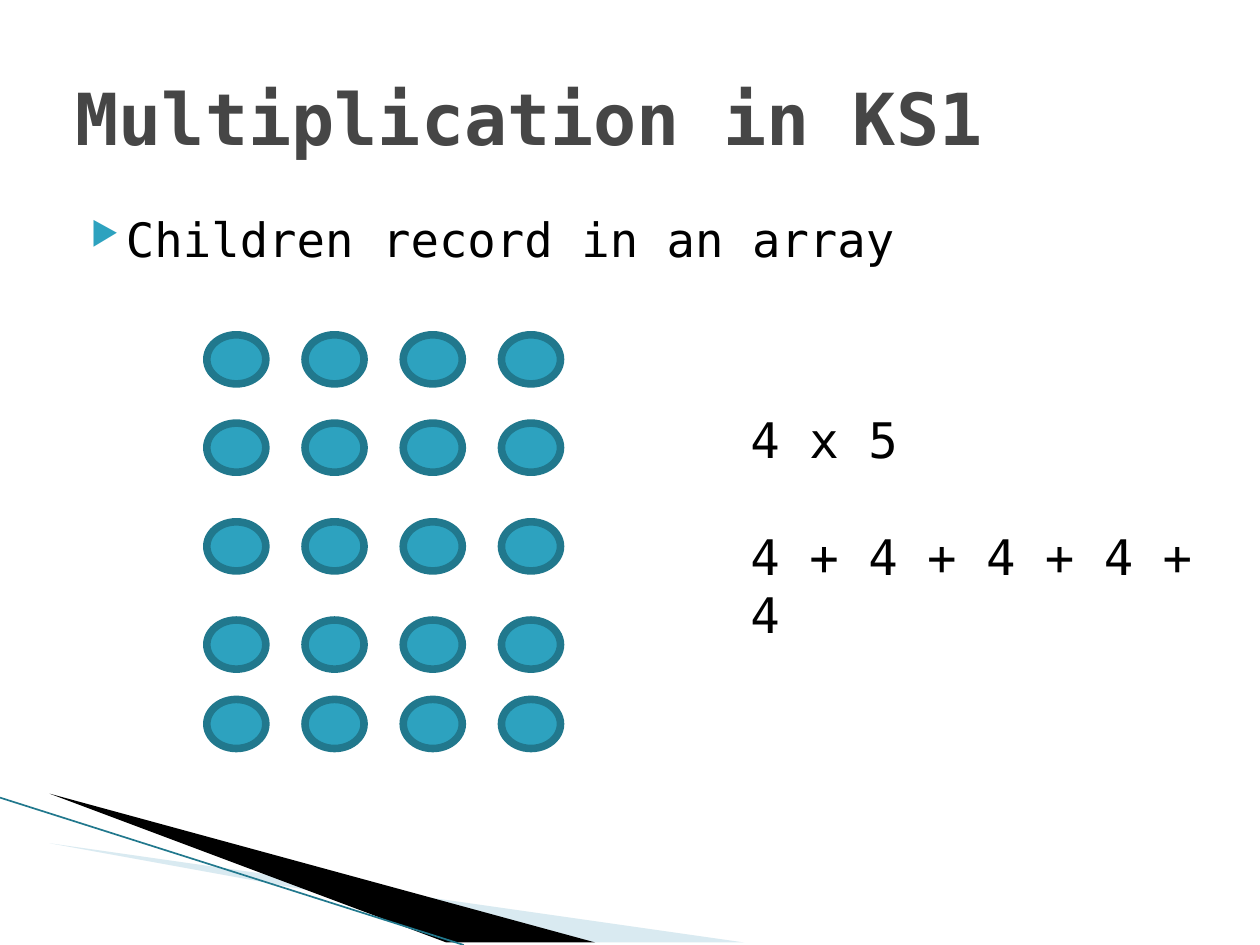
from lxml import etree
from pptx import Presentation
from pptx.dml.color import RGBColor
from pptx.enum.shapes import MSO_CONNECTOR, MSO_SHAPE
from pptx.enum.text import MSO_ANCHOR, PP_ALIGN
from pptx.oxml.ns import qn
from pptx.util import Cm, Pt

STRAIGHT = MSO_CONNECTOR.STRAIGHT
OVAL = MSO_SHAPE.OVAL
MIDDLE = MSO_ANCHOR.MIDDLE
LEFT = PP_ALIGN.LEFT

TEAL = RGBColor(0x2D, 0xA2, 0xBF)
DARK_TEAL = RGBColor(0x21, 0x78, 0x8D)
PALE = RGBColor(0xA0, 0xCB, 0xDC)
GREY = RGBColor(0x46, 0x46, 0x46)
BLACK = RGBColor(0, 0, 0)

FONT = "DejaVu Sans Mono"
TITLE = {"name": FONT, "size": Pt(41), "bold": True}
BULLET = {"name": FONT, "size": Pt(27)}
SUM = {"name": FONT, "size": Pt(28)}


class SlideBuilder:
    """Draws styled elements on the current slide."""

    def __init__(self, slide):
        self.s = slide

    def place(self, sp, box):
        sp.left, sp.top, sp.width, sp.height = (Cm(v) for v in box)

    def add_text_run(self, p, text, fmt, color):
        p.alignment = LEFT
        r = p.add_run()
        r.text = text
        for key, value in fmt.items():
            setattr(r.font, key, value)
        r.font.color.rgb = color

    def title(self, text, box):
        sp = self.s.shapes.title
        self.place(sp, box)
        tf = sp.text_frame
        tf.word_wrap = True
        tf.vertical_anchor = MIDDLE
        self.add_text_run(tf.paragraphs[0], text, TITLE, GREY)

    def text(self, lines, box, fmt, gap=0):
        sp = self.s.shapes.add_textbox(*(Cm(v) for v in box))
        tf = sp.text_frame
        tf.word_wrap = True
        for i, line in enumerate(lines):
            p = tf.add_paragraph() if i else tf.paragraphs[0]
            if i:
                p.space_before = Pt(gap)
            self.add_text_run(p, line, fmt, BLACK)
        return tf

    def bullet(self, text, box):
        p = self.text([text], box, BULLET).paragraphs[0]
        pPr = p._p.get_or_add_pPr()
        pPr.set("marL", str(Cm(1.02)))
        pPr.set("indent", str(Cm(-0.71)))
        clr = etree.SubElement(pPr, qn("a:buClr"))
        etree.SubElement(clr, qn("a:srgbClr"), val=str(TEAL))
        etree.SubElement(pPr, qn("a:buSzPct"), val="68000")
        etree.SubElement(pPr, qn("a:buChar"), char="▶")

    def dot(self, x, y, w, h):
        sp = self.s.shapes.add_shape(OVAL, Cm(x), Cm(y), Cm(w), Cm(h))
        sp.shadow.inherit = False
        sp.fill.solid()
        sp.fill.fore_color.rgb = TEAL
        sp.line.color.rgb = DARK_TEAL
        sp.line.width = Pt(4.33)

    def wedge(self, points, color, alpha=100):
        fb = self.s.shapes.build_freeform(*points[0], scale=Cm(1))
        fb.add_line_segments(points[1:], close=True)
        sp = fb.convert_to_shape()
        sp.shadow.inherit = False
        sp.fill.solid()
        sp.fill.fore_color.rgb = color
        sp.line.fill.background()
        if alpha < 100:
            clr = sp._element.spPr.find(qn("a:solidFill"))[0]
            etree.SubElement(clr, qn("a:alpha"), val=str(alpha * 1000))

    def line(self, x1, y1, x2, y2):
        sp = self.s.shapes.add_connector(STRAIGHT, Cm(x1), Cm(y1), Cm(x2), Cm(y2))
        sp.line.color.rgb = DARK_TEAL
        sp.line.width = Pt(0.95)
        etree.SubElement(sp._element.spPr, qn("a:effectLst"))


def main():
    prs = Presentation()
    prs.slide_width, prs.slide_height = Cm(25.4), Cm(19.05)
    b = SlideBuilder(prs.slides.add_slide(prs.slide_layouts[5]))

    b.wedge([(1.4, 16.52), (15, 19.05), (11.5, 19.05)], PALE, 40)
    b.wedge([(1.35, 16.49), (11.5, 19.05), (9.3, 19.05)], BLACK)
    b.line(0, 16.08, 9.35, 19.05)

    b.title("Multiplication in KS1", (1.27, 0.76, 22.86, 3.18))
    b.bullet("Children record in an array", (1.27, 4.11, 22.86, 1.6))
    for y in (6.75, 8.53, 10.52, 12.5, 14.1):
        for col in range(4):
            b.dot(4.17 + 1.98 * col, y, 1.19, 0.99)
    b.text(["4 x 5", "4 + 4 + 4 + 4 + 4"], (14.88, 8.13, 9.53, 3.84), SUM, gap=33)

    prs.save("out.pptx")


if __name__ == "__main__":
    main()
